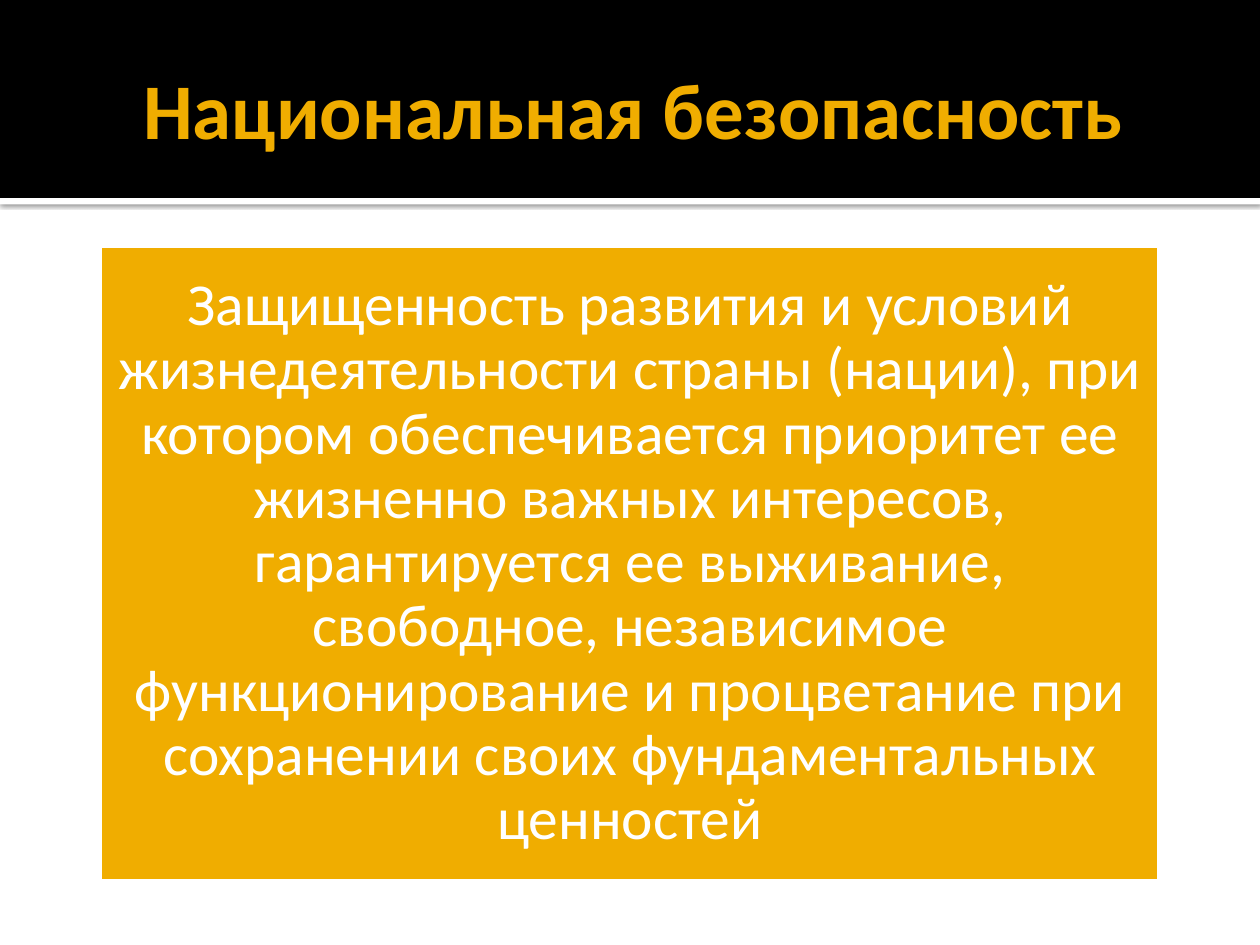
import pptx
import pptx.util
import pptx.dml.color
import pptx.enum.shapes
import pptx.enum.text
import pptx.oxml.ns
from lxml import etree

Cm, Pt = pptx.util.Cm, pptx.util.Pt
RGBColor = pptx.dml.color.RGBColor

GOLD = RGBColor(0xF0, 0xAD, 0x00)
WHITE = RGBColor(0xFF, 0xFF, 0xFF)
BLACK = RGBColor(0x00, 0x00, 0x00)

WIDE, HIGH = 25.4, 19.05
BAND = 3.99
TITLE = "Национальная безопасность"
BODY = (
    "Защищенность развития и условий жизнедеятельности страны (нации), "
    "при котором обеспечивается приоритет ее жизненно важных интересов, "
    "гарантируется ее выживание, свободное, независимое функционирование "
    "и процветание при сохранении своих фундаментальных ценностей"
)
SHADE = (
    '<a:effectLst xmlns:a="http://schemas.openxmlformats.org/drawingml/2006/main">'
    '<a:outerShdw blurRad="31750" dist="10160" dir="5400000" rotWithShape="0">'
    '<a:srgbClr val="000000"><a:alpha val="60000"/></a:srgbClr>'
    "</a:outerShdw></a:effectLst>"
)


class Deck:
    """Holds the text style and the current slide."""

    font = "Calibri"

    def __init__(self, wide, high):
        self.file = pptx.Presentation()
        self.file.slide_width, self.file.slide_height = Cm(wide), Cm(high)
        self.slide = self.file.slides.add_slide(self.file.slide_layouts[6])

    def rect(self, x, y, w, h, fill, line=None, width=0):
        kind = pptx.enum.shapes.MSO_SHAPE.RECTANGLE
        shape = self.slide.shapes.add_shape(kind, Cm(x), Cm(y), Cm(w), Cm(h))
        shape.shadow.inherit = False
        shape.fill.solid()
        shape.fill.fore_color.rgb = fill
        if line is None:
            shape.line.fill.background()
        else:
            shape.line.color.rgb = line
            shape.line.width = Pt(width)
        return shape

    def shade(self, shape):
        props = shape.element.spPr
        props.remove(props.find(pptx.oxml.ns.qn("a:effectLst")))
        props.append(etree.fromstring(SHADE))

    def box(self, x, y, w, h):
        return self.slide.shapes.add_textbox(Cm(x), Cm(y), Cm(w), Cm(h))

    def label(self, shape, text, size, color, inset, bold=False, space=1.0):
        frame = shape.text_frame
        frame.word_wrap = True
        frame.vertical_anchor = pptx.enum.text.MSO_ANCHOR.MIDDLE
        (frame.margin_left, frame.margin_top,
         frame.margin_right, frame.margin_bottom) = map(Cm, inset)
        para = frame.paragraphs[0]
        para.text = text
        para.alignment = pptx.enum.text.PP_ALIGN.CENTER
        para.line_spacing = space
        para.font.name, para.font.size = self.font, Pt(size)
        para.font.bold = bold
        para.font.color.rgb = color


def main():
    deck = Deck(WIDE, HIGH)

    # Header band with a shaded white strip below it
    strip = deck.rect(0, BAND, WIDE, 0.13, WHITE)
    deck.shade(strip)
    deck.rect(0, 0, WIDE, BAND, BLACK)

    # Title
    title = deck.box(1.27, 0.43, 22.86, 3.48)
    deck.label(title, TITLE, 45, GOLD, (0.25, 0.13, 0.13, 0.13), bold=True)

    # Definition panel
    panel = deck.rect(2, 4.93, WIDE - 4, 12.85, GOLD, WHITE, 3.78)
    deck.label(panel, BODY, 34, WHITE, (0.36,) * 4, space=0.9)

    deck.file.save("out.pptx")


if __name__ == "__main__":
    main()
